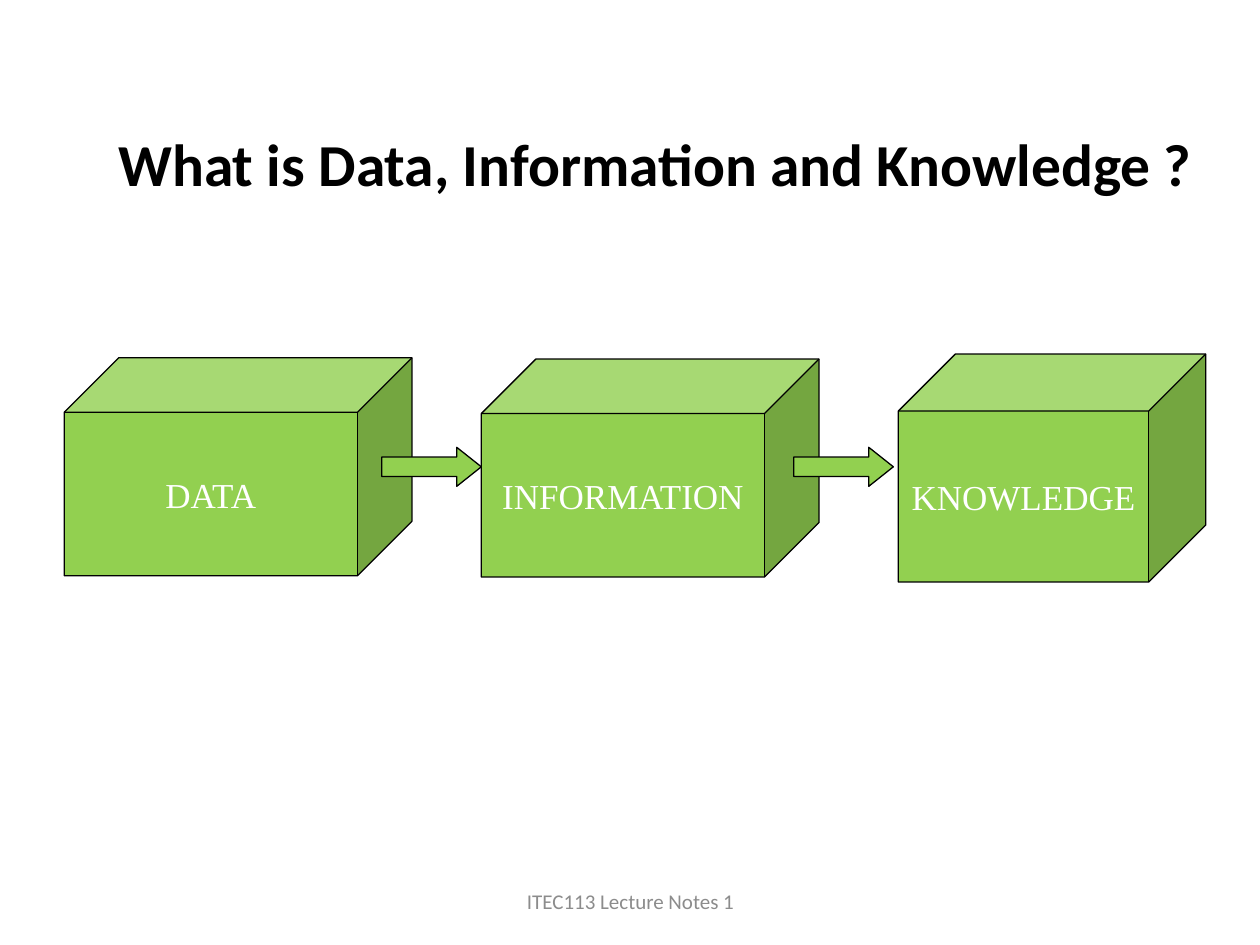
from dataclasses import dataclass

from pptx import Presentation
from pptx.dml.color import RGBColor
from pptx.enum.shapes import MSO_SHAPE as Shape
from pptx.enum.text import MSO_ANCHOR as Anchor, PP_ALIGN as Align
from pptx.util import Inches, Pt

GREEN = RGBColor(0x92, 0xD0, 0x50)
BLACK = RGBColor(0, 0, 0)
WHITE = RGBColor(0xFF, 0xFF, 0xFF)
GRAY = RGBColor(0x8C, 0x8C, 0x8C)


@dataclass
class Box:
    left: float
    top: float
    width: float
    height: float

    def lengths(self) -> list:
        return [Inches(v) for v in (self.left, self.top, self.width, self.height)]


@dataclass
class Cube:
    label: str
    box: Box


CUBES = [
    Cube("DATA", Box(0.51, 2.84, 2.76, 1.73)),
    Cube("INFORMATION", Box(3.82, 2.85, 2.68, 1.73)),
    Cube("KNOWLEDGE", Box(7.13, 2.81, 2.44, 1.81)),
]
ARROWS = [Box(left, 3.55, 0.79, 0.31) for left in (3.03, 6.3)]


def write(shape, text: str, *, size: float, color: RGBColor,
          font: str = "Calibri", bold: bool = False, wrap: bool = True) -> None:
    frame = shape.text_frame
    frame.word_wrap = wrap
    frame.vertical_anchor = Anchor.MIDDLE
    para = frame.paragraphs[0]
    para.alignment = Align.CENTER
    run = para.add_run()
    run.text = text
    run.font.name = font
    run.font.size = Pt(size)
    run.font.bold = bold
    run.font.color.rgb = color


def draw(slide, kind: Shape, box: Box, *adjust: float):
    shape = slide.shapes.add_shape(kind, *box.lengths())
    shape.shadow.inherit = False
    shape.fill.solid()
    shape.fill.fore_color.rgb = GREEN
    shape.line.color.rgb = BLACK
    shape.line.width = Pt(0.75)
    for i, value in enumerate(adjust):
        shape.adjustments[i] = value
    return shape


def main() -> None:
    deck = Presentation()
    deck.slide_width, deck.slide_height = Inches(10), Inches(7.5)
    slide = deck.slides.add_slide(deck.slide_layouts[5])

    # Title
    title = slide.shapes.title
    title.left, title.top, title.width, title.height = Box(0.75, 0.67, 8.9, 1.25).lengths()
    write(title, "What is Data, Information and Knowledge ?",
          size=34, color=BLACK, bold=True)

    # Footer
    footer = slide.shapes.add_textbox(*Box(3.42, 6.95, 3.17, 0.4).lengths())
    write(footer, "ITEC113 Lecture Notes 1", size=12, color=GRAY)

    # Stages
    for cube in CUBES:
        shape = draw(slide, Shape.CUBE, cube.box, 0.25)
        write(shape, cube.label, size=20, color=WHITE,
              font="Times New Roman", wrap=False)

    # Arrows between stages
    for box in ARROWS:
        draw(slide, Shape.RIGHT_ARROW, box, 0.5, 0.63)

    deck.save("out.pptx")


if __name__ == "__main__":
    main()
